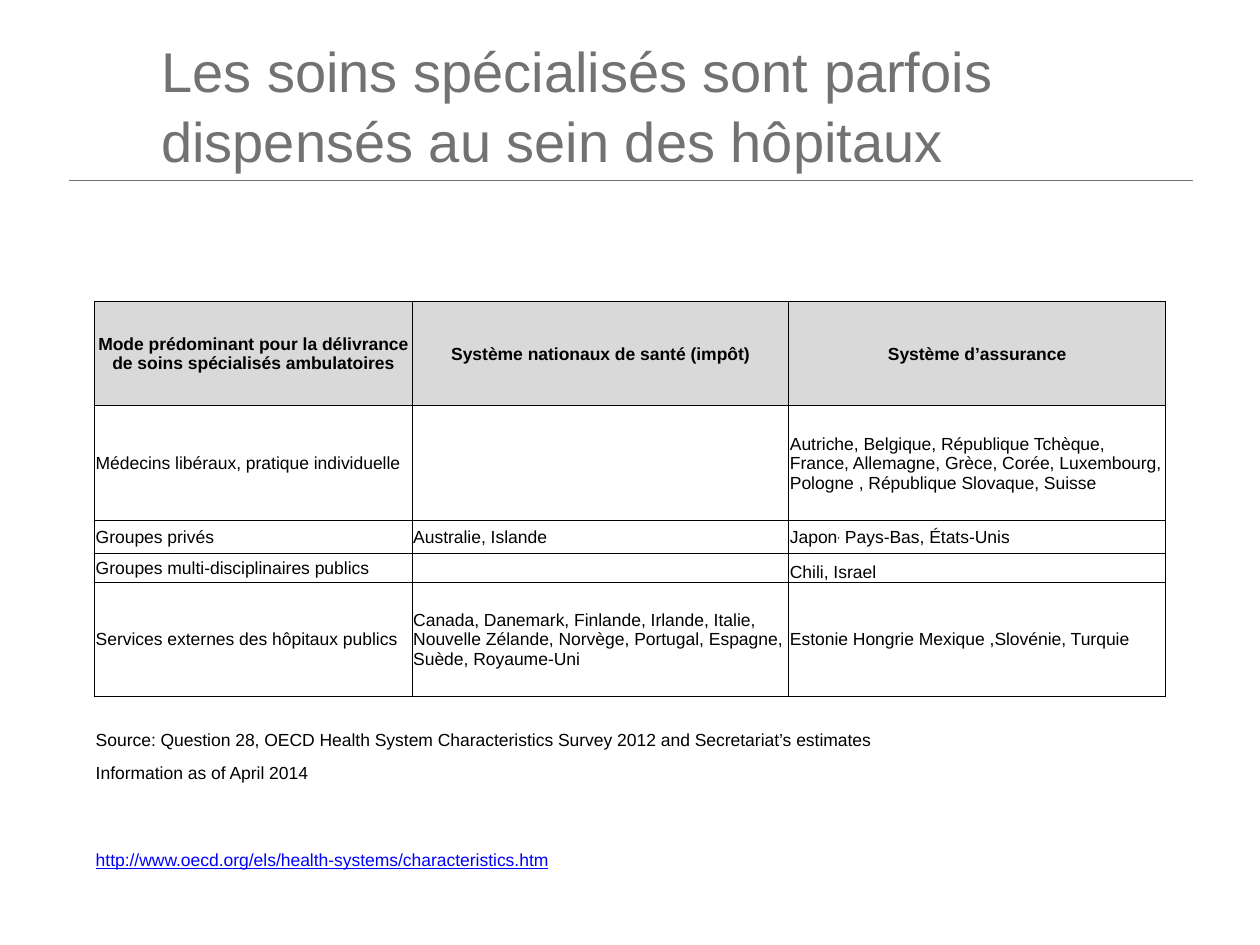
import pptx
import pptx.util
import pptx.dml.color
import pptx.enum.text
import pptx.enum.shapes
from pptx.oxml.ns import qn
from lxml import etree

Inch = pptx.util.Inches
Pt = pptx.util.Pt
Align = pptx.enum.text.PP_ALIGN
Anchor = pptx.enum.text.MSO_ANCHOR

TITLE = "Les soins spécialisés sont parfois dispensés au sein des hôpitaux"
HEAD = [
    "Mode prédominant pour la délivrance de soins spécialisés ambulatoires",
    "Système nationaux de santé (impôt)",
    "Système d’assurance",
]
BODY = [
    ["Médecins libéraux, pratique individuelle", "",
     "Autriche, Belgique, République Tchèque, France, Allemagne, Grèce, Corée, "
     "Luxembourg, Pologne , République Slovaque, Suisse"],
    ["Groupes privés", "Australie, Islande",
     [("Japon", 0), (",", 30), (" Pays-Bas, États-Unis", 0)]],
    ["Groupes multi-disciplinaires publics", "", "Chili, Israel"],
    ["Services externes des hôpitaux publics",
     "Canada, Danemark, Finlande, Irlande, Italie, Nouvelle Zélande, Norvège, "
     "Portugal, Espagne, Suède, Royaume-Uni",
     "Estonie Hongrie Mexique ,Slovénie, Turquie"],
]
NOTES = {
    9: "Source: Question 28, OECD Health System Characteristics Survey 2012 "
       "and Secretariat’s estimates",
    10: "Information as of April 2014",
    13: "http://www.oecd.org/els/health-systems/characteristics.htm",
}
COLS = [2.52, 2.99, 2.99]
LOW = 0.23
TALL = {3: 0.83, 4: 0.91, 5: 0.26, 7: 0.91}
ROWS = [TALL.get(row, LOW) for row in range(14)]
SPANS = {0: 2, 9: 2, 11: 2, 13: 1}
LOWER = {(6, 2), (10, 0), (13, 0)}
TOP, END = 3, 3 + len(BODY)


def color(code):
    return pptx.dml.color.RGBColor.from_string(code)


def write(frame, text, size=10, tint="000000", bold=False, under=False,
          align=Align.LEFT, space=1.0):
    para = frame.paragraphs[0]
    para.alignment = align
    para.line_spacing = space
    parts = [(text, 0)] if isinstance(text, str) else text
    for words, lift in parts:
        if not words:
            continue
        run = para.add_run()
        run.text = words
        font = run.font
        font.name, font.size = "Arial", Pt(size)
        font.bold, font.underline = bold, under
        font.color.rgb = color(tint)
        if lift:
            font._element.set("baseline", str(lift * 1000))
    etree.SubElement(para._p, qn("a:endParaRPr"), sz=str(size * 100))


def border(cell, sides):
    props = cell._tc.get_or_add_tcPr()
    for side in "LRTB":
        line = etree.SubElement(props, qn("a:ln" + side), w=str(Pt(0.5)))
        if side in sides:
            fill = etree.SubElement(line, qn("a:solidFill"))
            etree.SubElement(fill, qn("a:srgbClr"), val="000000")
        else:
            etree.SubElement(line, qn("a:noFill"))


def sides(row):
    if TOP <= row <= END:
        return "LRTB"
    return {TOP - 1: "B", END + 1: "T"}.get(row, "")


def content(row, col):
    if row == TOP:
        return HEAD[col]
    if TOP < row <= END:
        return BODY[row - TOP - 1][col]
    return NOTES.get(row, "") if col == 0 else ""


def build():
    deck = pptx.Presentation()
    deck.slide_width, deck.slide_height = Inch(10), Inch(7.5)
    slide = deck.slides.add_slide(deck.slide_layouts[5])

    rule = slide.shapes.add_connector(
        pptx.enum.shapes.MSO_CONNECTOR.STRAIGHT,
        Inch(0.55), Inch(1.43), Inch(9.47), Inch(1.43))
    rule.line.color.rgb = color("727272")
    rule.line.width = Pt(0.5)
    etree.SubElement(rule._element.spPr, qn("a:effectLst"))

    title = slide.shapes.title
    title.left, title.top = Inch(1.18), Inch(0.26)
    title.width, title.height = Inch(8.11), Inch(1.12)
    frame = title.text_frame
    frame.word_wrap = True
    frame.auto_size = pptx.enum.text.MSO_AUTO_SIZE.NONE
    frame.vertical_anchor = Anchor.MIDDLE
    write(frame, TITLE, size=32, tint="727272", space=1.05)

    table = slide.shapes.add_table(
        len(ROWS), len(COLS), Inch(0.75), Inch(1.7),
        Inch(sum(COLS)), Inch(sum(ROWS))).table
    table.first_row = table.horz_banding = False
    for col, width in enumerate(COLS):
        table.columns[col].width = Inch(width)
    for row, height in enumerate(ROWS):
        table.rows[row].height = Inch(height)
        head, link = row == TOP, row == 13
        for col in range(len(COLS)):
            cell = table.cell(row, col)
            cell.margin_left = cell.margin_right = cell.margin_top = Inch(0.01)
            cell.margin_bottom = 0
            low = (row, col) in LOWER
            cell.vertical_anchor = Anchor.BOTTOM if low else Anchor.MIDDLE
            border(cell, sides(row))
            if head:
                cell.fill.solid()
                cell.fill.fore_color.rgb = color("D9D9D9")
            else:
                cell.fill.background()
            write(cell.text_frame, content(row, col), bold=head, under=link,
                  tint="0000FF" if link else "000000",
                  align=Align.CENTER if head else Align.LEFT)
    for row, last in SPANS.items():
        table.cell(row, 0).merge(table.cell(row, last))
    deck.save("out.pptx")


if __name__ == "__main__":
    build()
